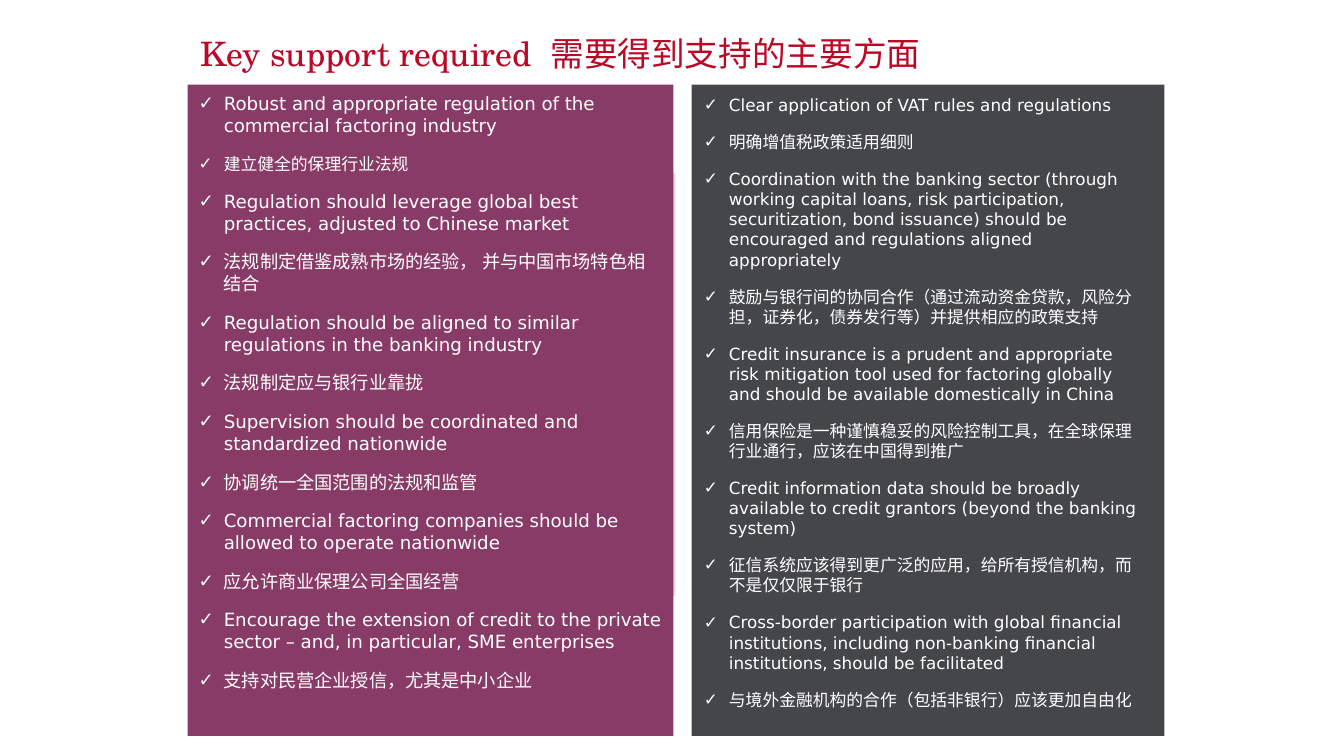
"""Build the slide on key support required for commercial factoring."""
import lxml.etree
import pptx
import pptx.dml.color
import pptx.enum.shapes
import pptx.enum.text
import pptx.oxml.ns
import pptx.util

Inches = pptx.util.Inches
Pt = pptx.util.Pt

HEADING = "Key support required  需要得到支持的主要方面"
REGULATION = [
    ("Robust and appropriate regulation of the commercial factoring industry", 13),
    ("建立健全的保理行业法规", 12),
    ("Regulation should leverage global best practices, adjusted to Chinese market", 13),
    ("法规制定借鉴成熟市场的经验， 并与中国市场特色相结合", 13),
    ("Regulation should be aligned to similar regulations in the banking industry", 13),
    ("法规制定应与银行业靠拢", 13),
    ("Supervision should be coordinated and standardized nationwide", 13),
    ("协调统一全国范围的法规和监管", 13),
    ("Commercial factoring companies should be allowed to operate nationwide", 13),
    ("应允许商业保理公司全国经营", 13),
    ("Encourage the extension of credit to the private sector – and, in particular, "
     "SME enterprises", 13),
    ("支持对民营企业授信，尤其是中小企业", 13),
]
COORDINATION = [
    ("Clear application of VAT rules and regulations", 12),
    ("明确增值税政策适用细则", 12),
    ("Coordination with the banking sector (through working capital loans, risk "
     "participation, securitization, bond issuance) should be encouraged and "
     "regulations aligned appropriately", 12),
    ("鼓励与银行间的协同合作（通过流动资金贷款，风险分担，证券化，债券发行等）并提供相应的政策支持", 12),
    ("Credit insurance is a prudent and appropriate risk mitigation tool used for "
     "factoring globally and should be available domestically in China", 12),
    ("信用保险是一种谨慎稳妥的风险控制工具，在全球保理行业通行，应该在中国得到推广", 12),
    ("Credit information data should be broadly available to credit grantors "
     "(beyond the banking system)", 12),
    ("征信系统应该得到更广泛的应用，给所有授信机构，而不是仅仅限于银行", 12),
    ("Cross-border participation with global financial institutions, including "
     "non-banking financial institutions, should be facilitated", 12),
    ("与境外金融机构的合作（包括非银行）应该更加自由化", 12),
]
THEME = {
    "heading": "BB0826", "text": "FFFFFF", "backing": "D9D9D6",
    "plum": "893B67", "slate": "44464A",
    "heading_font": "TeX Gyre Schola", "body_font": "DejaVu Sans", "heading_size": 24,
}
HEADING_BOX = (1.99, 0.31, 9.75, 0.39)
BACKING_BOX = (3.57, 1.72, 3.13, 4.19)
COLUMNS = [
    (REGULATION, "plum", (1.86, 0.84, 4.82, 6.46), (1.97, 0.92, 4.6, 6.02)),
    (COORDINATION, "slate", (6.86, 0.84, 4.69, 6.46), (6.98, 0.94, 4.41, 5.22)),
]
FRAME_FORMAT = {
    "margin_left": 0, "margin_top": 0, "margin_right": 0, "margin_bottom": 0,
    "word_wrap": True, "auto_size": pptx.enum.text.MSO_AUTO_SIZE.NONE,
    "vertical_anchor": pptx.enum.text.MSO_ANCHOR.TOP,
}


def rgb(role):
    return pptx.dml.color.RGBColor.from_string(THEME[role])


def apply_format(target, values):
    for attribute, value in values.items():
        setattr(target, attribute, value)


def style_font(font, face, size, role):
    apply_format(font, {"name": THEME[face], "size": Pt(size)})
    font.color.rgb = rgb(role)


def add_panel(slide, box, role):
    panel = slide.shapes.add_shape(
        pptx.enum.shapes.MSO_SHAPE.RECTANGLE, *map(Inches, box))
    panel.shadow.inherit = False
    panel.fill.solid()
    panel.fill.fore_color.rgb = rgb(role)
    panel.line.fill.background()


def add_check(paragraph):
    qn = pptx.oxml.ns.qn
    properties = paragraph._p.get_or_add_pPr()
    properties.set("marL", str(Inches(0.25)))
    properties.set("indent", str(-Inches(0.25)))
    color = lxml.etree.SubElement(properties, qn("a:buClr"))
    lxml.etree.SubElement(color, qn("a:srgbClr"), val=THEME["text"])
    lxml.etree.SubElement(properties, qn("a:buFont"), typeface=THEME["body_font"])
    lxml.etree.SubElement(properties, qn("a:buChar"), char="✓")


def add_points(slide, points, box):
    frame = slide.shapes.add_textbox(*map(Inches, box)).text_frame
    apply_format(frame, FRAME_FORMAT)
    for index, (point, size) in enumerate(points):
        paragraph = frame.add_paragraph() if index else frame.paragraphs[0]
        paragraph.space_after = Pt(12)
        add_check(paragraph)
        run = paragraph.add_run()
        run.text = point
        style_font(run.font, "body_font", size, "text")


def add_heading(slide):
    heading = slide.shapes.title
    apply_format(heading, dict(zip(("left", "top", "width", "height"),
                                   map(Inches, HEADING_BOX))))
    apply_format(heading.text_frame, FRAME_FORMAT)
    paragraph = heading.text_frame.paragraphs[0]
    apply_format(paragraph, {"alignment": pptx.enum.text.PP_ALIGN.LEFT,
                             "line_spacing": 1.05})
    run = paragraph.add_run()
    run.text = HEADING
    style_font(run.font, "heading_font", THEME["heading_size"], "heading")


def main():
    deck = pptx.Presentation()
    apply_format(deck, {"slide_width": Inches(13.33), "slide_height": Inches(7.5)})
    slide = deck.slides.add_slide(deck.slide_layouts[5])
    add_heading(slide)
    add_panel(slide, BACKING_BOX, "backing")
    for points, role, panel_box, points_box in COLUMNS:
        add_panel(slide, panel_box, role)
        add_points(slide, points, points_box)
    deck.save("out.pptx")


if __name__ == "__main__":
    main()
